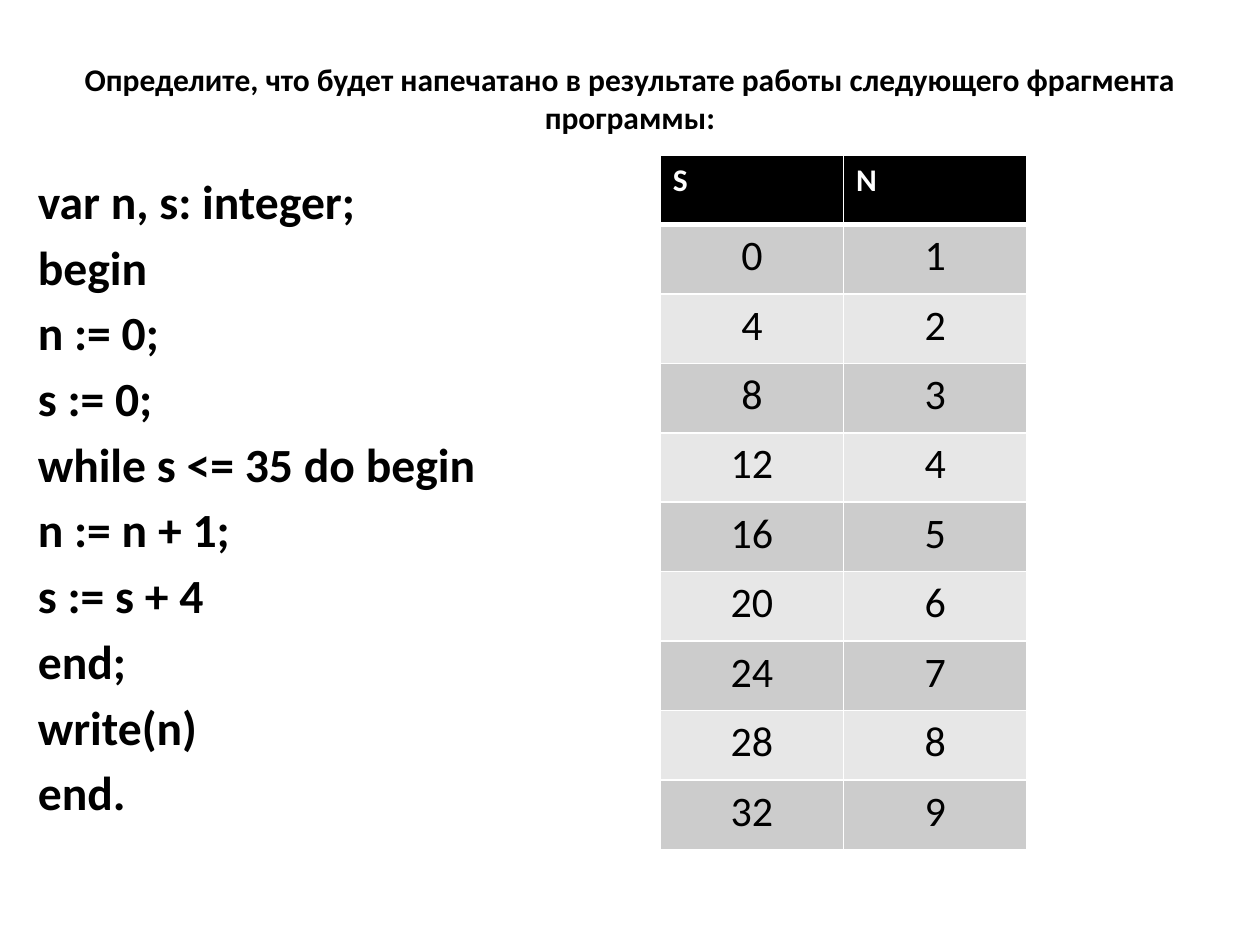
import pptx
import pptx.dml.color
import pptx.enum.text
import pptx.oxml
import pptx.oxml.ns
import pptx.util
from lxml import etree

Inches, Pt = pptx.util.Inches, pptx.util.Pt
ALIGN = pptx.enum.text.PP_ALIGN
ANCHOR = pptx.enum.text.MSO_ANCHOR
WIDTH, HEIGHT = Inches(10), Inches(7.5)
qn = pptx.oxml.ns.qn

QUESTION = "Определите, что будет напечатано в результате работы следующего фрагмента программы:"
PROGRAM = [
    "var n, s: integer;", "begin", "n := 0;", "s := 0;", "while s <= 35 do begin",
    "n := n + 1;", "s := s + 4", "end;", "write(n)", "end.",
]
TRACE = [("S", "N")] + [(str(4 * step), str(step + 1)) for step in range(9)]


def color(value):
    return pptx.dml.color.RGBColor.from_string(value)


def box(left, top, width, height):
    return {
        "left": round(left * WIDTH), "top": round(top * HEIGHT),
        "width": round(width * WIDTH), "height": round(height * HEIGHT),
    }


def apply(target, values):
    for name, value in values.items():
        setattr(target, name, value)


def style(paragraph, size, bold, ink="000000", align=ALIGN.LEFT):
    paragraph.alignment = align
    apply(paragraph.font, {"name": "Calibri", "size": Pt(size), "bold": bold})
    paragraph.font.color.rgb = color(ink)


def place_question(question, area):
    apply(question, area)
    question.text_frame.text = QUESTION
    apply(question.text_frame, {
        "auto_size": pptx.enum.text.MSO_AUTO_SIZE.NONE,
        "vertical_anchor": ANCHOR.MIDDLE,
        "margin_bottom": Inches(0.35),
    })
    style(question.text_frame.paragraphs[0], 18, True, align=ALIGN.CENTER)


def place_program(program, area):
    apply(program, area)
    program.text_frame.text = "\n".join(PROGRAM)
    apply(program.text_frame, {
        "auto_size": pptx.enum.text.MSO_AUTO_SIZE.NONE,
        "vertical_anchor": ANCHOR.TOP,
    })
    for line in program.text_frame.paragraphs:
        style(line, 27.2, True)
        line.space_before = Pt(4.9)
        properties = line._p.get_or_add_pPr()
        properties.set("marL", str(Inches(0.38)))
        properties.set("indent", str(-Inches(0.38)))
        etree.SubElement(properties, qn("a:buNone"))


def draw_borders(cell, widths):
    properties = cell._tc.get_or_add_tcPr()
    for position, (side, width) in enumerate(widths.items()):
        border = etree.Element(qn(f"a:{side}"), w=str(Pt(width)))
        fill = etree.SubElement(border, qn("a:solidFill"))
        etree.SubElement(fill, qn("a:srgbClr"), val="FFFFFF")
        properties.insert(position, border)


def place_trace(slide, area):
    trace = slide.shapes.add_table(len(TRACE), len(TRACE[0]), **area).table
    for row, values in enumerate(TRACE):
        header = row == 0
        shade = "000000" if header else ("E7E7E7", "CCCCCC")[row % 2]
        for column, value in enumerate(values):
            cell = trace.cell(row, column)
            cell.text = value
            cell.fill.solid()
            cell.fill.fore_color.rgb = color(shade)
            if header:
                style(cell.text_frame.paragraphs[0], 18, True, "FFFFFF")
            else:
                style(cell.text_frame.paragraphs[0], 24, False, align=ALIGN.CENTER)
            draw_borders(cell, {
                "lnL": 1, "lnR": 1,
                "lnT": 3 if row == 1 else 1,
                "lnB": 3 if header else 1,
            })


def main():
    deck = pptx.Presentation()
    apply(deck, {"slide_width": WIDTH, "slide_height": HEIGHT})
    slide = deck.slides.add_slide(deck.slide_layouts[1])
    place_question(slide.shapes.title, box(0.05, 0.04, 0.9, 0.167))
    place_program(slide.placeholders[1], box(0.02, 0.175, 0.93, 0.72))
    place_trace(slide, box(0.524, 0.164, 0.291, 0.735))
    deck.save("out.pptx")


if __name__ == "__main__":
    main()
